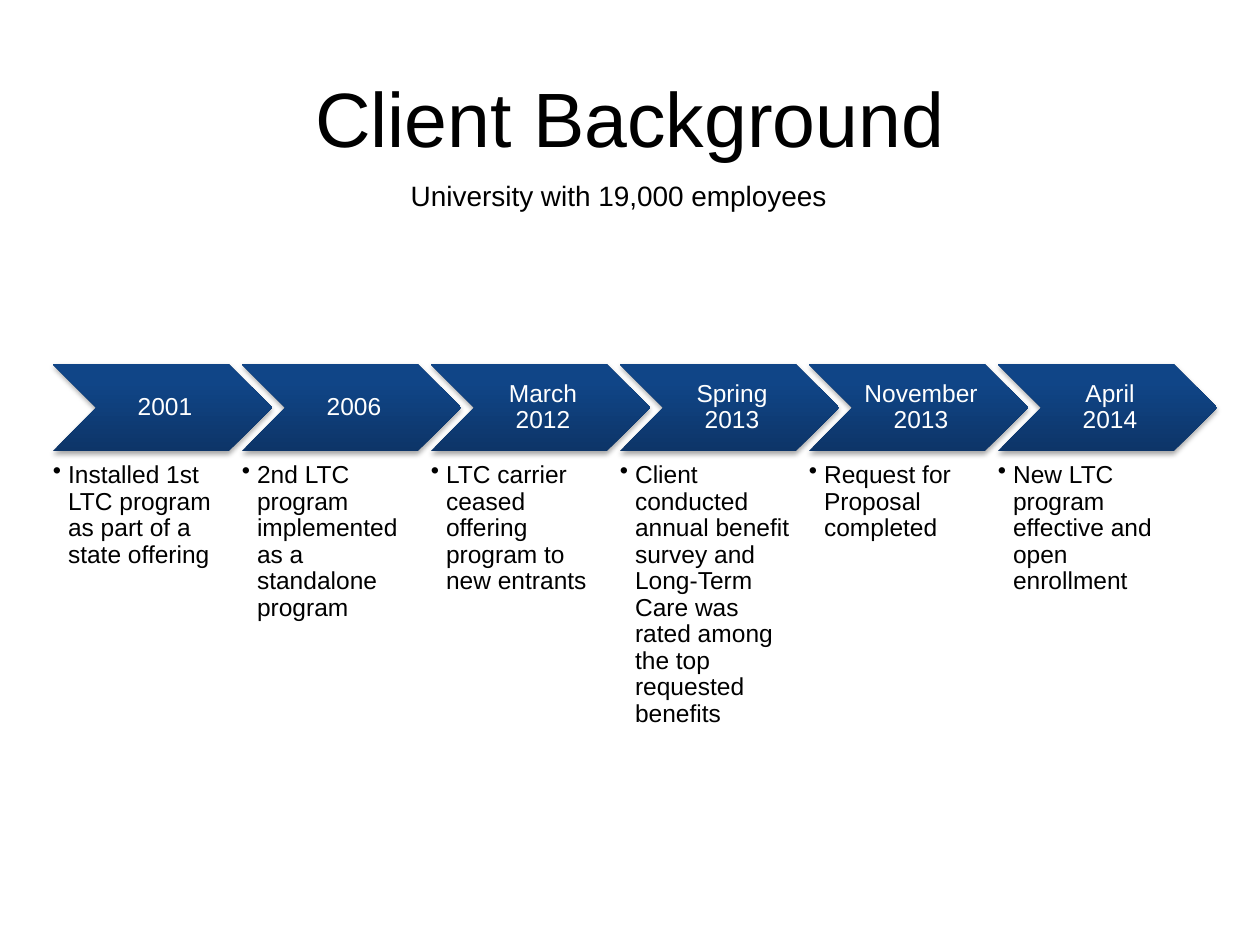
"""Build a client background slide with a six-step chevron timeline."""
from copy import deepcopy

from pptx import Presentation
from pptx import util as u
from pptx.dml.color import RGBColor
from pptx.enum import shapes, text
from pptx.oxml import parse_xml
from pptx.oxml.ns import nsdecls, qn

BLACK = RGBColor(0x00, 0x00, 0x00)
WHITE = RGBColor(0xFF, 0xFF, 0xFF)
GRADIENT = (
    (0, RGBColor(0x0D, 0x35, 0x68)),
    (0.8, RGBColor(0x10, 0x45, 0x87)),
    (1, RGBColor(0x0E, 0x45, 0x8A)),
)
FONT = "Arial"
LEFT, PITCH, TOP = 0.42, 1.5, 2.89
CHEVRON_WIDTH, CHEVRON_HEIGHT = 1.74, 0.69
MILESTONES = (
    ("2001", "Installed 1st LTC program as part of a state offering"),
    ("2006", "2nd LTC program implemented as a standalone program"),
    ("March 2012", "LTC carrier ceased offering program to new entrants"),
    ("Spring 2013", "Client conducted annual benefit survey and Long-Term Care "
                    "was rated among the top requested benefits"),
    ("November 2013", "Request for Proposal completed"),
    ("April\n2014", "New LTC program effective and open enrollment"),
)
LABEL_FRAME = {
    "word_wrap": True,
    "vertical_anchor": text.MSO_ANCHOR.MIDDLE,
    "margin_left": u.Inches(0.06),
    "margin_top": u.Inches(0.02),
    "margin_right": u.Inches(0.02),
    "margin_bottom": u.Inches(0.02),
}
LABEL_PARAGRAPH = {
    "alignment": text.PP_ALIGN.CENTER,
    "line_spacing": 0.9,
    "space_after": u.Pt(5),
}
DETAIL_FRAME = {
    "word_wrap": True,
    "vertical_anchor": text.MSO_ANCHOR.TOP,
    "margin_left": 0,
    "margin_top": 0,
    "margin_right": 0,
    "margin_bottom": 0,
}
DETAIL_PARAGRAPH = {"level": 1, "line_spacing": 0.9, "space_after": u.Pt(2)}
SUBTITLE_CELL = {
    "vertical_anchor": text.MSO_ANCHOR.MIDDLE,
    "margin_left": u.Inches(0.01),
    "margin_top": u.Inches(0.01),
    "margin_right": u.Inches(0.01),
    "margin_bottom": 0,
}


def apply_format(target, values):
    """Set each named attribute on the target."""
    for name, value in values.items():
        setattr(target, name, value)


def inches(*lengths):
    """Convert several lengths to inches."""
    return [u.Inches(length) for length in lengths]


def write_paragraph(paragraph, words, size, color, values):
    """Fill a paragraph with formatted words."""
    paragraph.text = words
    apply_format(paragraph, values)
    for run in paragraph.runs:
        apply_format(run.font, {"name": FONT, "size": u.Pt(size)})
        run.font.color.rgb = color


def add_title(slide, words):
    """Place and format the title placeholder."""
    title = slide.shapes.title
    box = inches(0.5, 0.3, 9, 1.25)
    apply_format(title, dict(zip(("left", "top", "width", "height"), box)))
    title.text_frame.vertical_anchor = text.MSO_ANCHOR.MIDDLE
    write_paragraph(title.text_frame.paragraphs[0], words, 44, BLACK,
                    {"alignment": text.PP_ALIGN.CENTER})


def add_subtitle_table(slide, words):
    """Add a single-cell table with white borders."""
    table = slide.shapes.add_table(1, 1, *inches(3.25, 1.42, 5.89, 0.28)).table
    apply_format(table, {"first_row": False, "horz_banding": False})
    cell = table.cell(0, 0)
    apply_format(cell, SUBTITLE_CELL)
    write_paragraph(cell.text_frame.paragraphs[0], words, 16, BLACK, {})
    properties = cell._tc.get_or_add_tcPr()
    for side in ("lnL", "lnR", "lnT", "lnB"):
        properties.append(parse_xml(
            f'<a:{side} {nsdecls("a")} w="12700"><a:solidFill>'
            f'<a:srgbClr val="{WHITE}"/></a:solidFill></a:{side}>'))
    cell.fill.background()


def add_chevron(group, left):
    """Add a chevron with a three-stop gradient and a soft shadow."""
    chevron = group.shapes.add_shape(
        shapes.MSO_SHAPE.CHEVRON,
        *inches(left, TOP, CHEVRON_WIDTH, CHEVRON_HEIGHT))
    chevron.line.fill.background()
    chevron.fill.gradient()
    chevron.fill.gradient_angle = 90
    stops = chevron._element.spPr.find(".//" + qn("a:gsLst"))
    stops.append(deepcopy(stops[0]))
    for stop, (position, color) in zip(chevron.fill.gradient_stops, GRADIENT):
        stop.position = position
        stop.color.rgb = color
    chevron._element.spPr.append(parse_xml(
        f'<a:effectLst {nsdecls("a")}><a:outerShdw blurRad="39370" '
        'dist="22860" dir="5400000" rotWithShape="0"><a:srgbClr val="000000">'
        '<a:alpha val="35000"/></a:srgbClr></a:outerShdw></a:effectLst>'))


def add_text(group, box, words, color, frame_values, paragraph_values):
    """Add a formatted text box and return its paragraph."""
    frame = group.shapes.add_textbox(*inches(*box)).text_frame
    apply_format(frame, frame_values)
    paragraph = frame.paragraphs[0]
    write_paragraph(paragraph, words, 14, color, paragraph_values)
    return paragraph


def add_bullet(paragraph):
    """Give a paragraph a hanging bullet."""
    properties = paragraph._p.get_or_add_pPr()
    properties.set("marL", str(u.Inches(0.12)))
    properties.set("indent", str(u.Inches(-0.12)))
    properties.append(parse_xml(f'<a:buChar {nsdecls("a")} char="•"/>'))


def add_milestone(group, left, date, detail):
    """Add one timeline step: chevron, date and bulleted detail."""
    add_chevron(group, left)
    add_text(group, (left + 0.35, TOP, 1.04, CHEVRON_HEIGHT), date, WHITE,
             LABEL_FRAME, LABEL_PARAGRAPH)
    add_bullet(add_text(group, (left, 3.67, 1.39, 2.05), detail, BLACK,
                        DETAIL_FRAME, DETAIL_PARAGRAPH))


def main():
    """Build and save the slide."""
    presentation = Presentation()
    presentation.slide_width, presentation.slide_height = inches(10, 7.5)
    slide = presentation.slides.add_slide(presentation.slide_layouts[5])
    add_title(slide, "Client Background")
    add_subtitle_table(slide, "University with 19,000 employees")
    timeline = slide.shapes.add_group_shape()
    for index, (date, detail) in enumerate(MILESTONES):
        add_milestone(timeline, LEFT + index * PITCH, date, detail)
    presentation.save("out.pptx")


if __name__ == "__main__":
    main()
